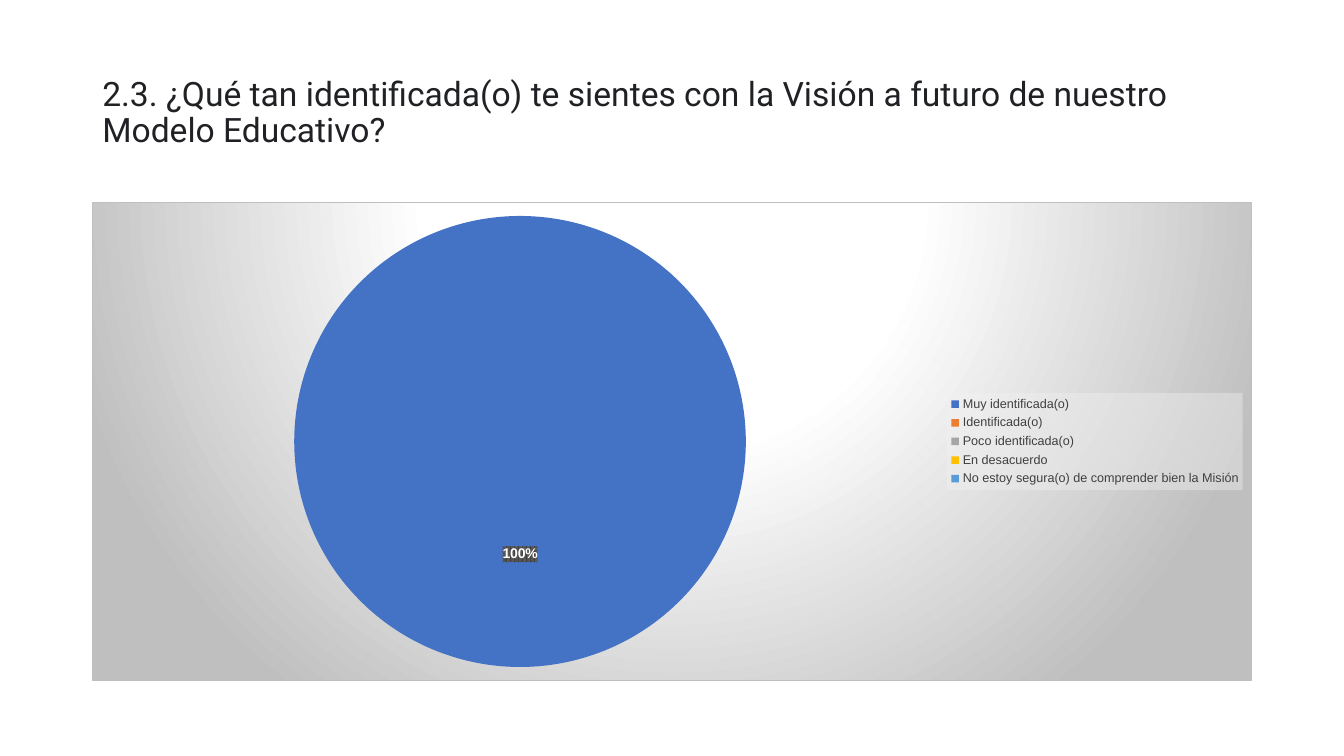
from lxml.etree import SubElement, fromstring
from pptx import Presentation
from pptx.chart.data import CategoryChartData
from pptx.dml.color import RGBColor
from pptx.enum.chart import XL_CHART_TYPE, XL_LABEL_POSITION, XL_LEGEND_POSITION
from pptx.enum.text import MSO_ANCHOR
from pptx.oxml.ns import nsdecls, qn
from pptx.util import Pt

SCALE = 9525
LEFT, WIDTH = 88, 1104
INK = RGBColor(0x20, 0x21, 0x24)
BLACK = RGBColor(0x00, 0x00, 0x00)
GREY = RGBColor(0x40, 0x40, 0x40)
SLATE = RGBColor(0x59, 0x59, 0x59)
SILVER = RGBColor(0xBF, 0xBF, 0xBF)
MIST = RGBColor(0xF2, 0xF2, 0xF2)
WHITE = RGBColor(0xFF, 0xFF, 0xFF)
BLUE = RGBColor(0x44, 0x72, 0xC4)
ORANGE = RGBColor(0xED, 0x7D, 0x31)
ASH = RGBColor(0xA5, 0xA5, 0xA5)
GOLD = RGBColor(0xFF, 0xC0, 0x00)
SKY = RGBColor(0x5B, 0x9B, 0xD5)

TITLE = (
    "2.3. ¿Qué tan identificada(o) te sientes con la Visión a futuro "
    "de nuestro Modelo Educativo?"
)
ANSWERS = [
    ("Muy identificada(o)", 100, BLUE),
    ("Identificada(o)", 0, ORANGE),
    ("Poco identificada(o)", 0, ASH),
    ("En desacuerdo", 0, GOLD),
    ("No estoy segura(o) de comprender bien la Misión", 0, SKY),
]
STOPS = [(0, WHITE), (39, WHITE), (100, SILVER)]


def tint(color, alpha=100):
    return f'<a:srgbClr val="{color}"><a:alpha val="{alpha * 1000}"/></a:srgbClr>'


def solid(color, alpha=100):
    return f"<a:solidFill>{tint(color, alpha)}</a:solidFill>"


def radial(stops):
    marks = "".join(
        f'<a:gs pos="{place * 1000}">{tint(color)}</a:gs>' for place, color in stops
    )
    focus = '<a:fillToRect l="50000" t="-80000" r="50000" b="180000"/>'
    return (
        f"<a:gradFill><a:gsLst>{marks}</a:gsLst>"
        f'<a:path path="circle">{focus}</a:path></a:gradFill>'
    )


def hatch(front, back):
    return (
        f'<a:pattFill prst="pct75"><a:fgClr>{tint(front)}</a:fgClr>'
        f"<a:bgClr>{tint(back)}</a:bgClr></a:pattFill>"
    )


class Deck:
    def __init__(self, width, height):
        self.show = Presentation()
        self.show.slide_width = width * SCALE
        self.show.slide_height = height * SCALE
        self.slide = self.show.slides.add_slide(self.show.slide_layouts[6])

    def style(self, font, name, size, color, bold=False):
        font.name, font.size, font.bold = name, Pt(size), bold
        font.color.rgb = color

    def paint(self, node, fill, line="<a:noFill/>"):
        shell = fromstring(
            f"<c:spPr {nsdecls('c', 'a')}>{fill}<a:ln w=\"9525\">{line}</a:ln></c:spPr>"
        )
        node.find(qn("c:txPr")).addprevious(shell)

    def title(self, text, *box):
        frame = self.slide.shapes.add_textbox(*[n * SCALE for n in box]).text_frame
        frame.word_wrap = True
        frame.vertical_anchor = MSO_ANCHOR.MIDDLE
        frame.text = text
        line = frame.paragraphs[0]
        line.line_spacing = 0.9
        self.style(line.runs[0].font, "Roboto", 24, INK)

    def pie(self, name, answers, *box):
        names, values, colors = zip(*answers)
        data = CategoryChartData()
        data.categories = names
        data.add_series(name, values)
        chart = self.slide.shapes.add_chart(
            XL_CHART_TYPE.PIE, *[n * SCALE for n in box], data
        ).chart
        chart.has_title = False
        self.style(chart.font, "Arial", 10, BLACK)
        self.paint(chart.element, radial(STOPS), solid(SILVER))
        plot = chart.plots[0]
        plot.vary_by_categories = True
        for spot, color in enumerate(colors):
            fill = plot.series[0].points[spot].format.fill
            fill.solid()
            fill.fore_color.rgb = color
        self.legend(chart)
        self.labels(chart, values)

    def legend(self, chart):
        chart.has_legend = True
        legend = chart.legend
        legend.position = XL_LEGEND_POSITION.RIGHT
        legend.include_in_layout = False
        self.style(legend.font, "Arial", 9, GREY)
        self.paint(chart.element.find(".//" + qn("c:legend")), solid(MIST, 39))

    def labels(self, chart, values):
        labels = chart.plots[0].series[0].data_labels
        labels.show_percentage = True
        labels.show_value = False
        labels.number_format = "0%"
        labels.number_format_is_linked = False
        labels.position = XL_LABEL_POSITION.CENTER
        self.style(labels.font, "Arial", 10, WHITE, bold=True)
        node = chart.element.find(".//" + qn("c:dLbls"))
        self.paint(node, hatch(GREY, SLATE))
        empty = [spot for spot, value in enumerate(values) if value == 0]
        for place, spot in enumerate(empty):
            label = fromstring(f"<c:dLbl {nsdecls('c')}/>")
            SubElement(label, qn("c:idx"), val=str(spot))
            SubElement(label, qn("c:delete"), val="1")
            node.insert(place, label)


def main():
    deck = Deck(1280, 720)
    deck.title(TITLE, LEFT, 39, WIDTH, 139)
    deck.pie("Series 1", ANSWERS, LEFT, 192, WIDTH, 457)
    deck.show.save("out.pptx")


if __name__ == "__main__":
    main()
